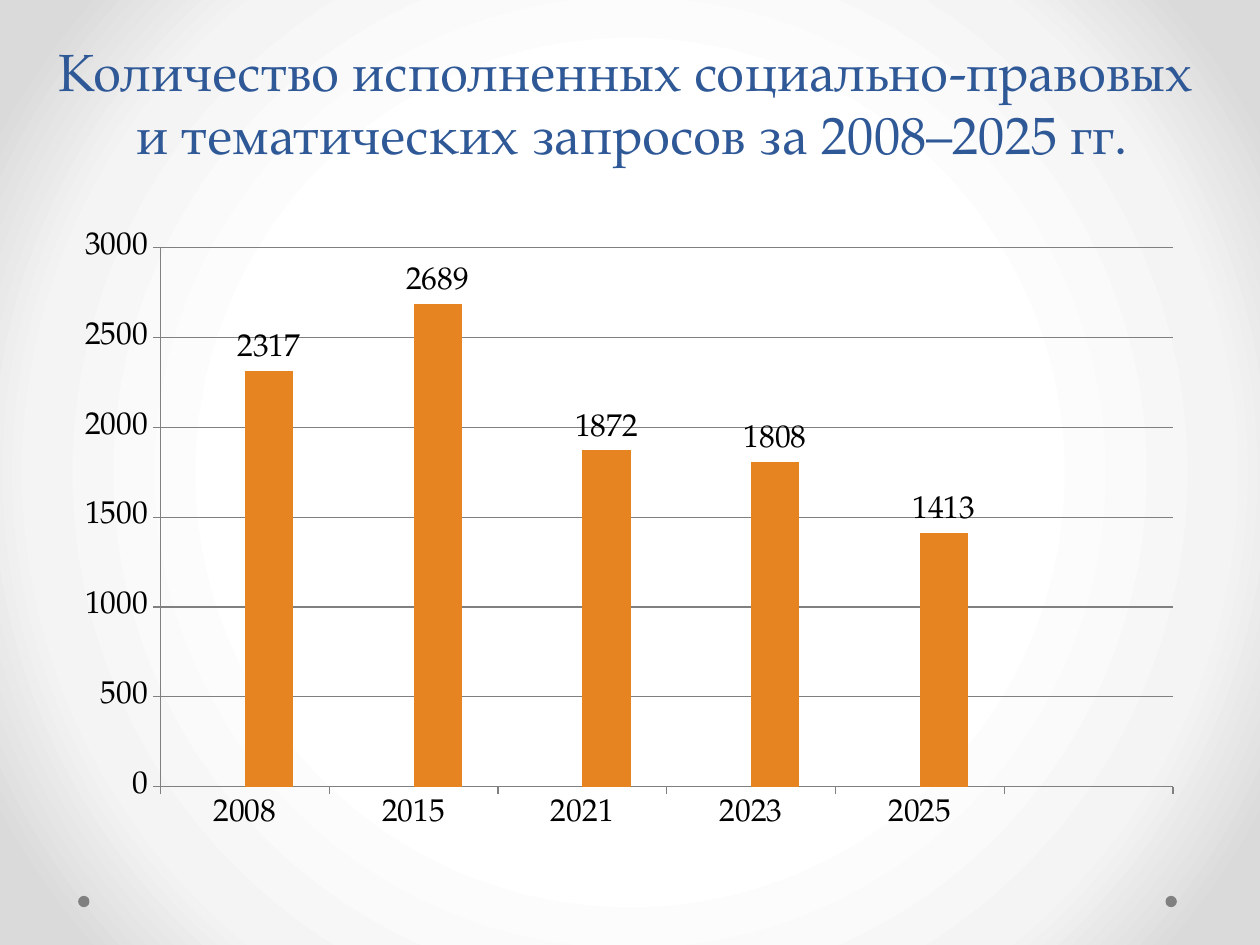
"""Build a slide with a column chart of completed archive requests by year."""
from dataclasses import dataclass

import lxml.etree
import pptx
import pptx.chart.data
import pptx.dml.color
import pptx.enum.chart
import pptx.enum.shapes
import pptx.enum.text
import pptx.oxml
import pptx.oxml.ns
import pptx.util


@dataclass(frozen=True)
class Theme:
    font: str = "TeX Gyre Pagella"
    title: str = "2F5897"
    text: str = "000000"
    line: str = "808080"
    empty_series: str = "6076B4"
    requests: str = "E68422"
    backdrop: tuple = ((50, "FFFFFF"), (76, "F4F4F4"), (92, "DADADA"))
    title_size: int = 30
    chart_size: int = 18


@dataclass(frozen=True)
class Area:
    left: float
    top: float
    width: float
    height: float

    def lengths(self) -> tuple:
        return tuple(pptx.util.Inches(value) for value in
                     (self.left, self.top, self.width, self.height))


@dataclass(frozen=True)
class Series:
    name: str
    values: tuple
    color: str
    labelled: bool


THEME = Theme()
WIDTH, HEIGHT = 10, 7.5
DOT = 0.09
TITLE = Area(0.02, 0.21, WIDTH, 1.15)
CHART = Area(WIDTH * 0.05, 1.75, WIDTH * 0.9, HEIGHT * 0.66)
PLOT = {"x": 0.086, "y": 0.044, "w": 0.893, "h": 0.864}
DOTS = [Area(left, 7.11, DOT, DOT) for left in (9.25, 0.62)]
YEARS = ("2008", "2015", "2021", "2023", "2025", "")
SERIES = (
    Series("Series 1", (None,) * len(YEARS), THEME.empty_series, False),
    Series("Series 2", (2317, 2689, 1872, 1808, 1413, None), THEME.requests, True),
)


def rgb(color: str) -> pptx.dml.color.RGBColor:
    return pptx.dml.color.RGBColor.from_string(color)


def style_font(font, size: float, color: str) -> None:
    font.name, font.size = THEME.font, pptx.util.Pt(size)
    font.color.rgb = rgb(color)


def paint_backdrop(page) -> None:
    page.background.fill.solid()
    properties = page.background.fill._xPr
    stops = "".join(f'<a:gs pos="{share * 1000}"><a:srgbClr val="{color}"/></a:gs>'
                    for share, color in THEME.backdrop)
    gradient = pptx.oxml.parse_xml(
        f'<a:gradFill {pptx.oxml.ns.nsdecls("a")} rotWithShape="1"><a:gsLst>{stops}</a:gsLst>'
        '<a:path path="circle"><a:fillToRect l="50000" t="50000" r="50000" b="50000"/>'
        '</a:path></a:gradFill>')
    properties.replace(properties[0], gradient)


def add_dot(page, area: Area) -> None:
    dot = page.shapes.add_shape(pptx.enum.shapes.MSO_SHAPE.OVAL, *area.lengths())
    dot.shadow.inherit = False
    dot.fill.solid()
    dot.fill.fore_color.rgb = rgb(THEME.line)
    dot.line.fill.background()


def add_text(page, text: str, *, area: Area, size: float, color: str) -> None:
    box = page.shapes.add_textbox(*area.lengths())
    frame = box.text_frame
    frame.word_wrap = True
    frame.vertical_anchor = pptx.enum.text.MSO_ANCHOR.BOTTOM
    para = frame.paragraphs[0]
    para.text = text
    para.alignment = pptx.enum.text.PP_ALIGN.CENTER
    for span in para.runs:
        style_font(span.font, size, color)


def style_axis(axis) -> None:
    axis.major_tick_mark = pptx.enum.chart.XL_TICK_MARK.OUTSIDE
    axis.minor_tick_mark = pptx.enum.chart.XL_TICK_MARK.NONE
    axis.format.line.color.rgb = rgb(THEME.line)
    style_font(axis.tick_labels.font, THEME.chart_size, THEME.text)


def fix_plot_area(chart) -> None:
    plot_area = chart._chartSpace.chart.plotArea
    for layout in plot_area.findall(pptx.oxml.ns.qn("c:layout")):
        plot_area.remove(layout)
    modes = '<c:xMode val="edge"/><c:yMode val="edge"/>'
    shares = "".join(f'<c:{side} val="{share}"/>' for side, share in PLOT.items())
    plot_area.insert(0, pptx.oxml.parse_xml(
        f'<c:layout {pptx.oxml.ns.nsdecls("c")}><c:manualLayout>'
        f'<c:layoutTarget val="inner"/>{modes}{shares}</c:manualLayout></c:layout>'))


def style_series(drawn, series: Series) -> None:
    drawn.format.fill.solid()
    drawn.format.fill.fore_color.rgb = rgb(series.color)
    drawn.invert_if_negative = False
    if series.labelled:
        labels = drawn.data_labels
        labels.show_value = True
        labels.position = pptx.enum.chart.XL_LABEL_POSITION.OUTSIDE_END
        style_font(labels.font, THEME.chart_size, THEME.text)


def add_requests_chart(page) -> None:
    data = pptx.chart.data.CategoryChartData()
    data.categories = YEARS
    for series in SERIES:
        data.add_series(series.name, series.values)
    chart = page.shapes.add_chart(pptx.enum.chart.XL_CHART_TYPE.COLUMN_CLUSTERED,
                                  *CHART.lengths(), data).chart
    chart.has_legend = chart.has_title = False
    style_font(chart.font, THEME.chart_size, THEME.text)
    plot = chart.plots[0]
    plot.gap_width, plot.overlap, plot.vary_by_categories = 150, 0, False
    for drawn, series in zip(plot.series, SERIES):
        style_series(drawn, series)
    for axis in (chart.category_axis, chart.value_axis):
        style_axis(axis)
    scale = chart.value_axis
    scale.minimum_scale, scale.maximum_scale, scale.major_unit = 0, 3000, 500
    scale.has_major_gridlines = True
    scale.major_gridlines.format.line.color.rgb = rgb(THEME.line)
    fix_plot_area(chart)


def main() -> None:
    deck = pptx.Presentation()
    deck.slide_width, deck.slide_height = pptx.util.Inches(WIDTH), pptx.util.Inches(HEIGHT)
    page = deck.slides.add_slide(deck.slide_layouts[6])
    paint_backdrop(page)
    for area in DOTS:
        add_dot(page, area)
    add_text(page, "Количество исполненных социально-правовых \vи тематических запросов за 2008–2025 гг.",
             area=TITLE, size=THEME.title_size, color=THEME.title)
    add_requests_chart(page)
    deck.save("out.pptx")


if __name__ == "__main__":
    main()
